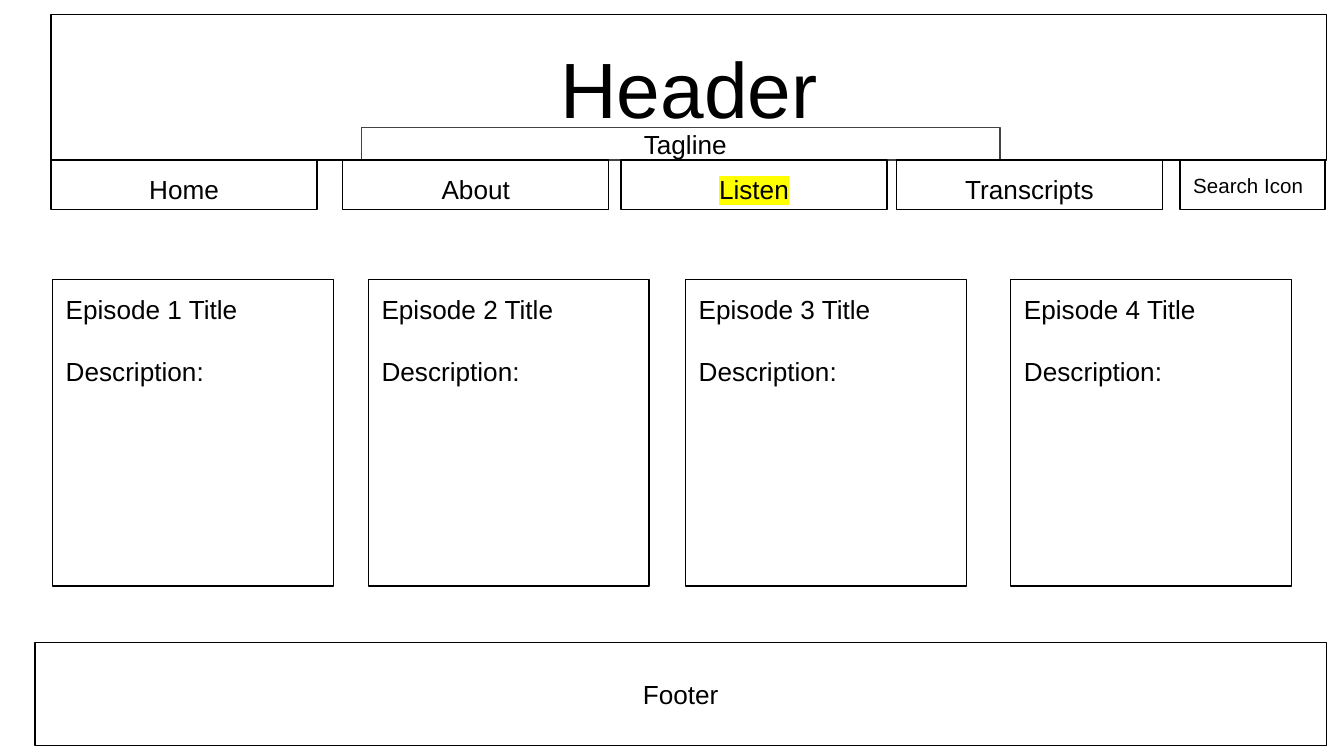
from lxml.etree import SubElement
from pptx import Presentation
from pptx.dml.color import RGBColor
from pptx.enum.shapes import MSO_SHAPE as Shape
from pptx.enum.text import MSO_ANCHOR as Anchor, PP_ALIGN as Align
from pptx.oxml.ns import qn
from pptx.util import Inches, Pt

COLORS = {"ink": "000000", "soft": "434343", "mark": "FFFF00"}


def color(name):
    """Return the named colour."""
    return RGBColor.from_string(COLORS[name])


def add_box(page, box, lines, size=14, align=Align.CENTER, anchor=Anchor.TOP,
            line="ink", indent=0, gap=0):
    """Draw an outlined box with one paragraph per line and return its shape."""
    shape = page.shapes.add_shape(Shape.RECTANGLE, *map(Inches, box))
    shape.shadow.inherit = False
    shape.fill.background()
    shape.line.color.rgb = color(line)
    shape.line.width = Pt(0.75)
    frame = shape.text_frame
    inset = Inches(0.1)
    settings = {"word_wrap": True, "vertical_anchor": anchor,
                "margin_left": inset + Inches(indent), "margin_right": inset,
                "margin_top": inset, "margin_bottom": inset}
    for name, value in settings.items():
        setattr(frame, name, value)
    for index, text in enumerate(lines):
        para = frame.add_paragraph() if index else frame.paragraphs[0]
        para.alignment = align
        para.space_before = Pt(gap if index else 0)
        span = para.add_run()
        span.text = text
        for name, value in {"name": "Arial", "size": Pt(size)}.items():
            setattr(span.font, name, value)
        span.font.color.rgb = color("ink")
    return shape


def highlight(shape):
    """Mark the first run of a shape with the highlight colour."""
    properties = shape.text_frame.paragraphs[0].runs[0].font.fill._xPr
    mark = SubElement(properties, qn("a:highlight"))
    SubElement(mark, qn("a:srgbClr"), val=COLORS["mark"])
    properties.find(qn("a:solidFill")).addnext(mark)


def add_header(page, left, top, width, height):
    """Draw the header with the tagline along its bottom edge."""
    add_box(page, (left, top, width, height), ["Header"], size=42, anchor=Anchor.MIDDLE)
    add_box(page, (left + 2.31, top + height - 0.24, 4.75, 0.24), ["Tagline"],
            align=Align.LEFT, anchor=Anchor.MIDDLE, line="soft", indent=2)


def add_navigation(page, left, top, width, height, current):
    """Draw the menu tabs and the search box at the right end."""
    tabs = {"Home": 0, "About": 2.17, "Listen": 4.24, "Transcripts": 6.29}
    add_box(page, (left + width - 1.08, top, 1.08, height), ["Search Icon"],
            size=11, align=Align.LEFT)
    for label, offset in tabs.items():
        tab = add_box(page, (left + offset, top, 1.98, height), [label])
        if label == current:
            highlight(tab)


def add_episodes(page, left, top, height):
    """Draw the row of episode cards."""
    for number, offset in enumerate((0, 2.35, 4.71, 7.13), start=1):
        add_box(page, (left + offset, top, 2.09, height),
                [f"Episode {number} Title", "Description:"], align=Align.LEFT, gap=16.5)


def add_footer(page, left, top, width, height):
    """Draw the footer."""
    add_box(page, (left, top, width, height), ["Footer"], anchor=Anchor.MIDDLE)


def main():
    """Build and save the deck."""
    deck = Presentation()
    deck.slide_width = Inches(10)
    deck.slide_height = deck.slide_width * 9 // 16
    page = deck.slides.add_slide(deck.slide_layouts[6])
    add_header(page, 0.38, 0.11, 9.49, 1.08)
    add_episodes(page, 0.39, 2.08, 2.28)
    add_footer(page, 0.26, 4.78, 9.61, 0.77)
    add_navigation(page, 0.38, 1.19, 9.48, 0.37, current="Listen")
    deck.save("out.pptx")


if __name__ == "__main__":
    main()
